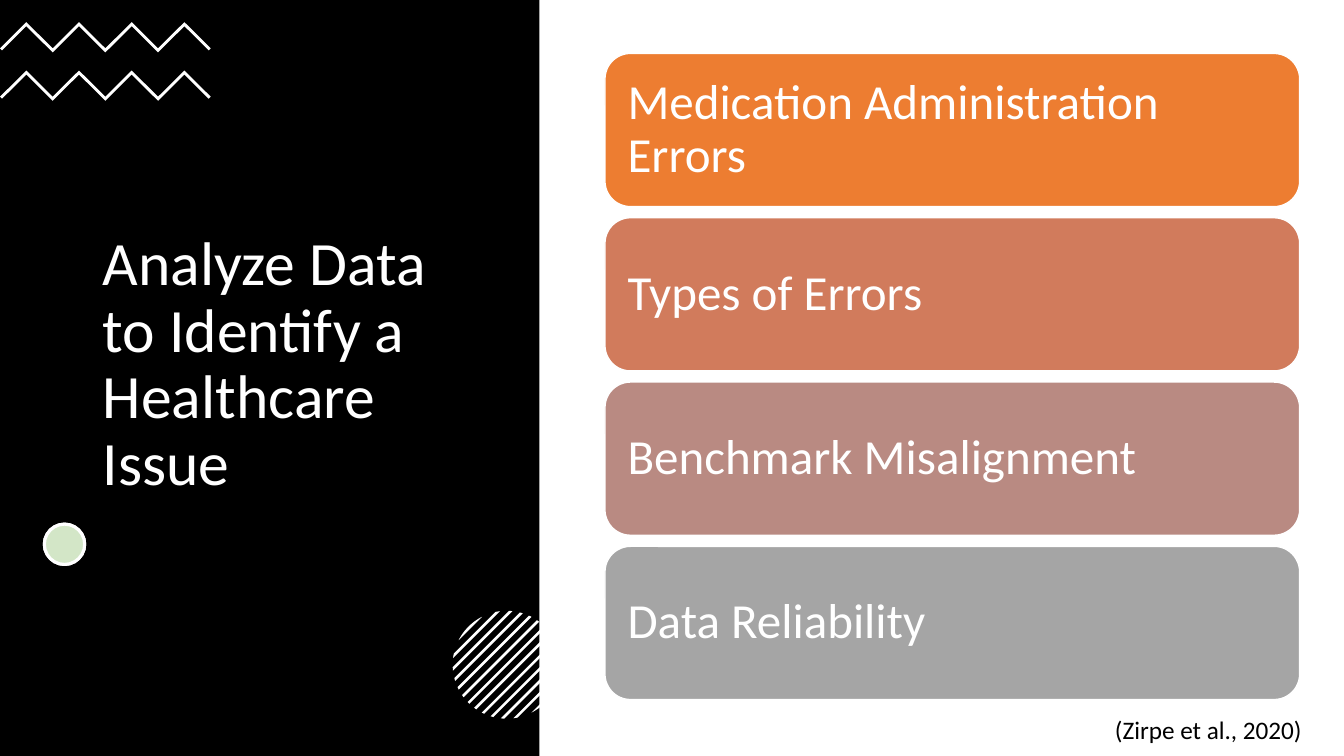
from dataclasses import dataclass
from math import acos, cos, pi, sin, sqrt

from lxml import etree
from pptx import Presentation
from pptx.dml.color import RGBColor
from pptx.enum.shapes import MSO_SHAPE
from pptx.enum.text import MSO_ANCHOR, MSO_AUTO_SIZE, PP_ALIGN
from pptx.oxml.ns import qn
from pptx.util import Pt

PX = 9144
SLIDE_W, SLIDE_H = 1333, 750
TITLE_ONLY = 5
RECT, OVAL, ROUNDED = MSO_SHAPE.RECTANGLE, MSO_SHAPE.OVAL, MSO_SHAPE.ROUNDED_RECTANGLE
MIDDLE, LEFT = MSO_ANCHOR.MIDDLE, PP_ALIGN.LEFT
NO_AUTOFIT, GROW = MSO_AUTO_SIZE.NONE, MSO_AUTO_SIZE.SHAPE_TO_FIT_TEXT


@dataclass(frozen=True)
class Theme:
    font: str = "Calibri"
    title_size: int = 44
    topic_size: int = 35
    citation_size: int = 18
    black: str = "000000"
    white: str = "FFFFFF"
    green: str = "70AD47"


THEME = Theme()
TITLE = "Analyze Data to Identify a Healthcare Issue"
CITATION = "(Zirpe et al., 2020)"
TOPICS = [
    ("Medication Administration Errors", "ED7D31"),
    ("Types of Errors", "D17B5C"),
    ("Benchmark Misalignment", "B98A82"),
    ("Data Reliability", "A5A5A5"),
]


def emu(*lengths):
    return [round(length * PX) for length in lengths]


def paint(shape, fill, line=None, line_width=1):
    shape.shadow.inherit = False
    shape.fill.solid()
    shape.fill.fore_color.rgb = RGBColor.from_string(fill)
    if line:
        shape.line.color.rgb = RGBColor.from_string(line)
        shape.line.width = Pt(line_width)
    else:
        shape.line.fill.background()


def add_block(slide, kind, box, fill, line=None, line_width=1):
    block = slide.shapes.add_shape(kind, *emu(*box))
    paint(block, fill, line, line_width)
    return block


def add_outline(slide, points, fill):
    start, *rest = [emu(x, y) for x, y in points]
    builder = slide.shapes.build_freeform(*start, scale=1.0)
    builder.add_line_segments(rest, close=True)
    paint(builder.convert_to_shape(), fill)


def write(shape, words, size, color, line_spacing=None, anchor=None):
    frame = shape.text_frame
    frame.word_wrap = True
    frame.vertical_anchor = anchor
    frame.text = words
    paragraph = frame.paragraphs[0]
    paragraph.alignment = LEFT
    paragraph.line_spacing = line_spacing
    paragraph.font.name = THEME.font
    paragraph.font.size = Pt(size)
    paragraph.font.color.rgb = RGBColor.from_string(color)
    return frame


def add_title_panel(slide):
    panel = add_block(slide, RECT, (0, 0, 535, SLIDE_H), THEME.black)
    title = slide.shapes.title
    title.element.addprevious(panel.element)
    title.left, title.top, title.width, title.height = emu(92, 131, 350, 463)
    frame = write(title, TITLE, THEME.title_size, THEME.white, 0.9, MIDDLE)
    frame.auto_size = NO_AUTOFIT


def add_zigzag(slide, top, width=209, height=26, thickness=4, halves=8):
    crest_line = [
        (i * width / halves, top if i % 2 else top + height)
        for i in range(halves + 1)
    ]
    inset = thickness / 2
    underside = [(x, y + thickness) for x, y in crest_line[1:-1]]
    end_y = top + height + inset
    underside = [(inset, end_y), *underside, (width - inset, end_y)]
    add_outline(slide, crest_line + underside[::-1], THEME.white)


def add_green_dot(slide):
    box = (44, 520, 40, 40)
    add_block(slide, OVAL, box, THEME.white, THEME.white, 2.25)
    dot = add_block(slide, OVAL, box, THEME.green, THEME.white, 2.25)
    tint = dot.element.spPr.find(qn("a:solidFill"))[0]
    etree.SubElement(tint, qn("a:alpha")).set("val", "30000")


def add_striped_disc(slide, left, top, diameter, pitch=8.7, thickness=2.55, side=6):
    radius = diameter / 2
    center_x, center_y = left + radius, top + radius

    def rim(angle):
        return (center_x + radius * cos(angle), center_y + radius * sin(angle))

    arc_steps = 8
    for index in range(-side, side + 1):
        near, far = [
            acos(max(-1, min(1, (index * pitch + shift) / radius)))
            for shift in (-thickness / 2, thickness / 2)
        ]
        spread = [near + (far - near) * i / arc_steps for i in range(arc_steps + 1)]
        angles = [pi / 4 + a for a in spread] + [pi / 4 - a for a in spread[::-1]]
        add_outline(slide, [rim(angle) for angle in angles], THEME.white)


def add_topics(slide, left=600, top=53, width=689, height=152, pitch=163):
    for row, (topic, color) in enumerate(TOPICS):
        box = (left, top + row * pitch, width, height)
        bar = add_block(slide, ROUNDED, box, color, THEME.white)
        frame = write(bar, topic, THEME.topic_size, THEME.white, 0.9, MIDDLE)
        frame.margin_left = frame.margin_right = 15 * PX
        frame.margin_top = frame.margin_bottom = 15 * PX


def add_citation(slide):
    citation = slide.shapes.add_textbox(*emu(1096, 704, 226, 40))
    frame = write(citation, CITATION, THEME.citation_size, THEME.black)
    frame.auto_size = GROW


def main():
    deck = Presentation()
    deck.slide_width, deck.slide_height = emu(SLIDE_W, SLIDE_H)
    slide = deck.slides.add_slide(deck.slide_layouts[TITLE_ONLY])
    add_title_panel(slide)
    for top in (22, 70):
        add_zigzag(slide, top)
    add_green_dot(slide)
    add_striped_disc(slide, 449, 606, 107)
    add_topics(slide)
    add_citation(slide)
    deck.save("out.pptx")


if __name__ == "__main__":
    main()
